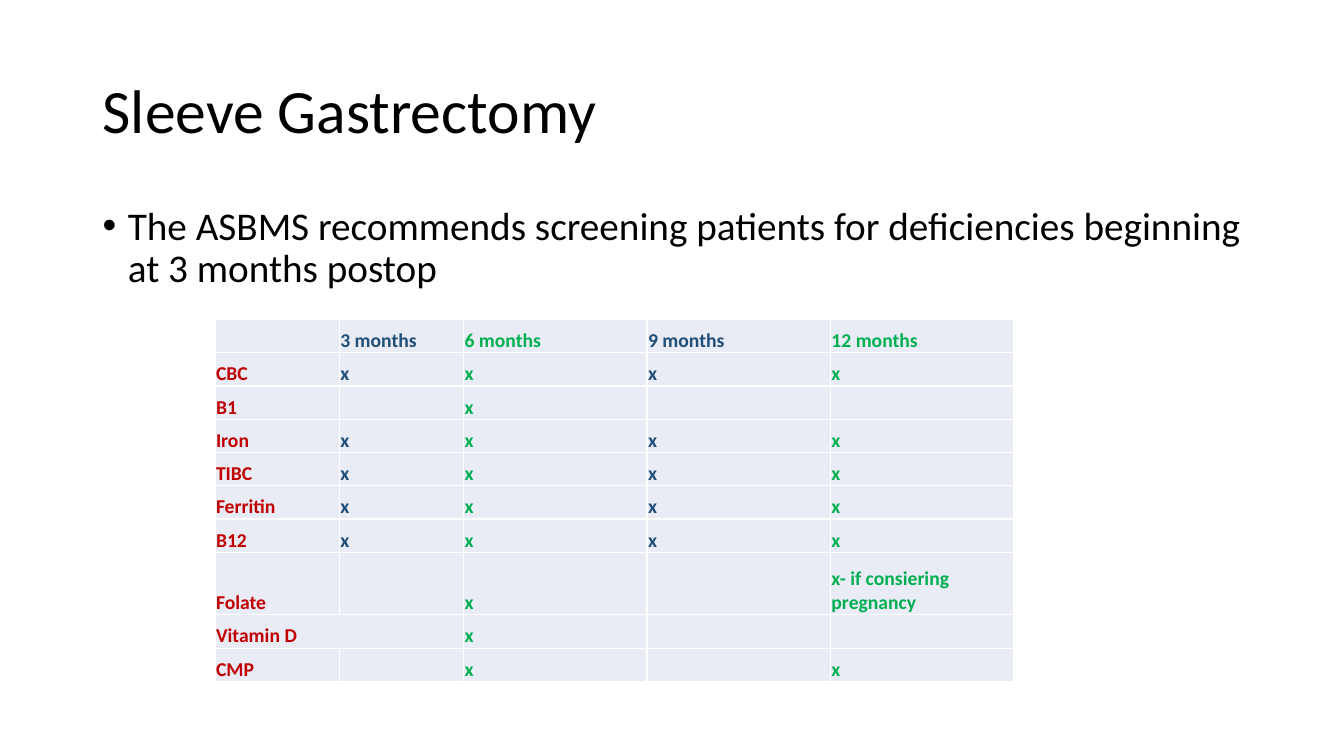
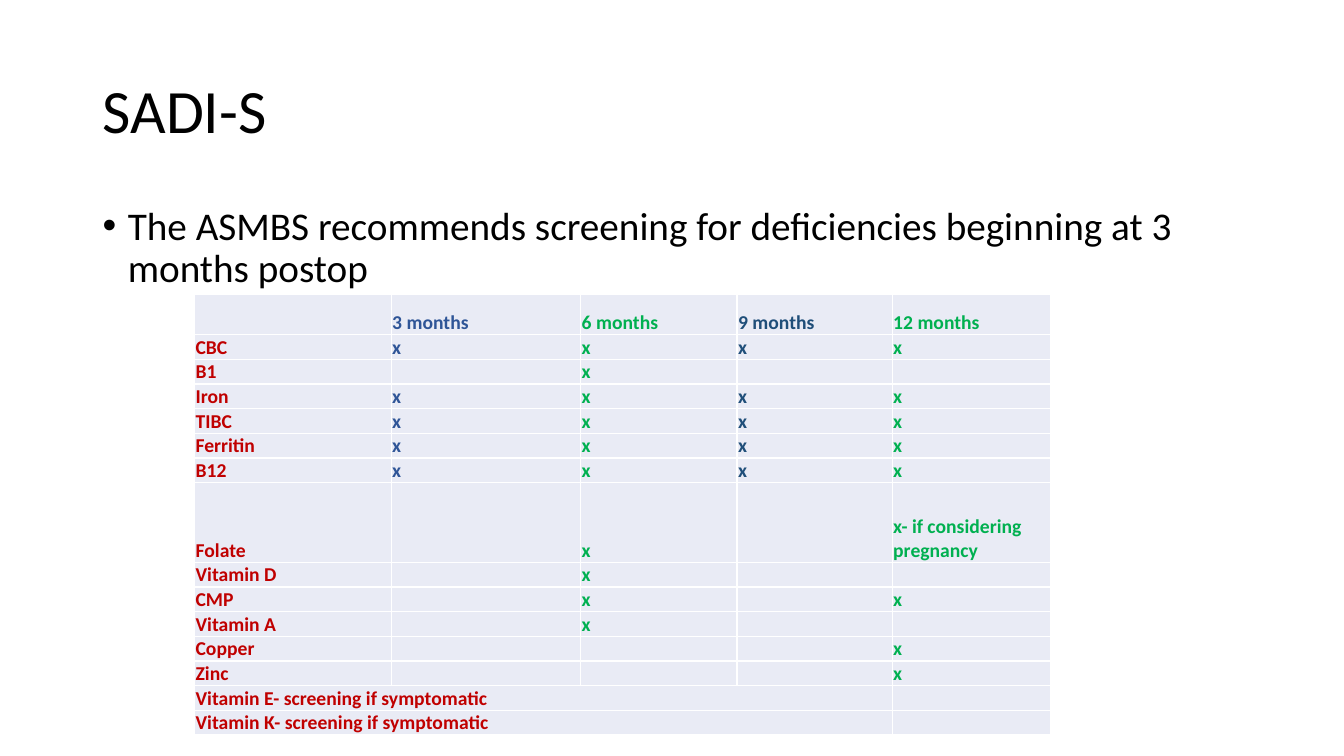
from lxml import etree
from pptx import Presentation
from pptx import util as u
from pptx.dml import color
from pptx.enum import text
from pptx.oxml import ns

COLORS = {"text": "000000", "label": "C00000", "navy": "1F4E79", "blue": "2F5597",
          "green": "00B050", "cell": "E9EBF5", "border": "FFFFFF"}
FONT = "Calibri"
MARGIN, CONTENT_WIDTH = 6.9, 86.25  # percent of the slide's width

deck = Presentation()
deck.slide_width, deck.slide_height = u.Inches(13.33), u.Inches(7.5)
across = deck.slide_width / 100
down = deck.slide_height / 100

MONTHS = ["", "3 months", "6 months", "9 months", "12 months"]
EVERY_VISIT = ["x"] * 4


def screening_rows(folate_note):
    """Rows that both screening schedules have in common."""
    return [
        MONTHS,
        ["CBC", *EVERY_VISIT],
        ["B1", "", "x", "", ""],
        *[[test, *EVERY_VISIT] for test in ("Iron", "TIBC", "Ferritin", "B12")],
        ["Folate", "", "x", "", folate_note],
        ["Vitamin D", "", "x", "", ""],
        ["CMP", "", "x", "", "x"],
    ]


def style(para, size, tint, bold=False):
    para.font.name = FONT
    para.font.size = u.Pt(size)
    para.font.bold = bold
    para.font.color.rgb = color.RGBColor.from_string(COLORS[tint])


# Lengths are percent of the slide's width or height; "merged" maps a row's
# label to the number of columns it covers.
SCHEDULES = [
    {
        "title": "Sleeve Gastrectomy",
        "advice": "The ASBMS recommends screening patients for deficiencies "
                  "beginning at 3 months postop",
        "rows": screening_rows("x- if consiering pregnancy"),
        "left": 16, "top": 42.27,
        "columns": [9.25, 9.25, 13.65, 13.65, 13.65],
        "header_height": 4.4, "folate_height": 8.27, "row_height": 4.4,
        "tints": ["label", "navy", "green", "navy", "green"],
        "merged": {"Vitamin D": 2},
    },
    {
        "title": "SADI-S",
        "advice": "The ASMBS recommends screening for deficiencies "
                  "beginning at 3 months postop",
        "rows": screening_rows("x- if considering pregnancy") + [
            ["Vitamin A", "", "x", "", ""],
            ["Copper", "", "", "", "x"],
            ["Zinc", "", "", "", "x"],
            ["Vitamin E- screening if symptomatic", "", "", "", ""],
            ["Vitamin K- screening if symptomatic", "", "", "", ""],
        ],
        "left": 14.48, "top": 38.93,
        "columns": [14.63, 14.1, 11.63, 11.55, 11.78],
        "header_height": 5.33, "folate_height": 10.53, "row_height": 3.27,
        "tints": ["label", "blue", "green", "navy", "green"],
        "merged": {"Vitamin E- screening if symptomatic": 4,
                   "Vitamin K- screening if symptomatic": 4},
    },
]

for schedule in SCHEDULES:
    page = deck.slides.add_slide(deck.slide_layouts[6])

    # Title and bulleted advice
    for words, top, height, size, anchor in (
        (schedule["title"], 5.33, 19.33, 44, text.MSO_ANCHOR.MIDDLE),
        (schedule["advice"], 26.67, 63.47, 28, text.MSO_ANCHOR.TOP),
    ):
        box = page.shapes.add_textbox(
            round(MARGIN * across), round(top * down),
            round(CONTENT_WIDTH * across), round(height * down))
        box.text_frame.word_wrap = True
        box.text_frame.vertical_anchor = anchor
        para = box.text_frame.paragraphs[0]
        para.text = words
        para.line_spacing = 0.9
        if words == schedule["advice"]:
            props = para._p.get_or_add_pPr()
            props.set("marL", str(u.Inches(0.25)))
            props.set("indent", str(-u.Inches(0.25)))
            etree.SubElement(props, ns.qn("a:buFont"), typeface="Arial")
            etree.SubElement(props, ns.qn("a:buChar"), char="•")
        style(para, size, "text")

    # Screening table
    rows, columns = schedule["rows"], schedule["columns"]
    heights = [schedule["row_height"]] * len(rows)
    heights[0] = schedule["header_height"]
    heights[[row[0] for row in rows].index("Folate")] = schedule["folate_height"]
    table = page.shapes.add_table(
        len(rows), len(columns),
        round(schedule["left"] * across), round(schedule["top"] * down),
        round(sum(columns) * across), round(sum(heights) * down)).table
    table.first_row = table.horz_banding = False
    for column, width in zip(table.columns, columns):
        column.width = round(width * across)
    for row, height in zip(table.rows, heights):
        row.height = round(height * down)

    for r, row in enumerate(rows):
        for c, (words, tint) in enumerate(zip(row, schedule["tints"])):
            cell = table.cell(r, c)
            cell.margin_left = cell.margin_right = cell.margin_top = u.Inches(0.01)
            cell.margin_bottom = 0
            cell.vertical_anchor = text.MSO_ANCHOR.BOTTOM
            para = cell.text_frame.paragraphs[0]
            para.text = words
            style(para, 14, tint, bold=True)
            props = cell._tc.get_or_add_tcPr()
            for side in ("lnL", "lnR", "lnT", "lnB"):
                line = etree.SubElement(props, ns.qn(f"a:{side}"), w=str(u.Pt(1)))
                fill = etree.SubElement(line, ns.qn("a:solidFill"))
                etree.SubElement(fill, ns.qn("a:srgbClr"), val=COLORS["border"])
            cell.fill.solid()
            cell.fill.fore_color.rgb = color.RGBColor.from_string(COLORS["cell"])
        if row[0] in schedule["merged"]:
            table.cell(r, 0).merge(table.cell(r, schedule["merged"][row[0]] - 1))

deck.save("out.pptx")
